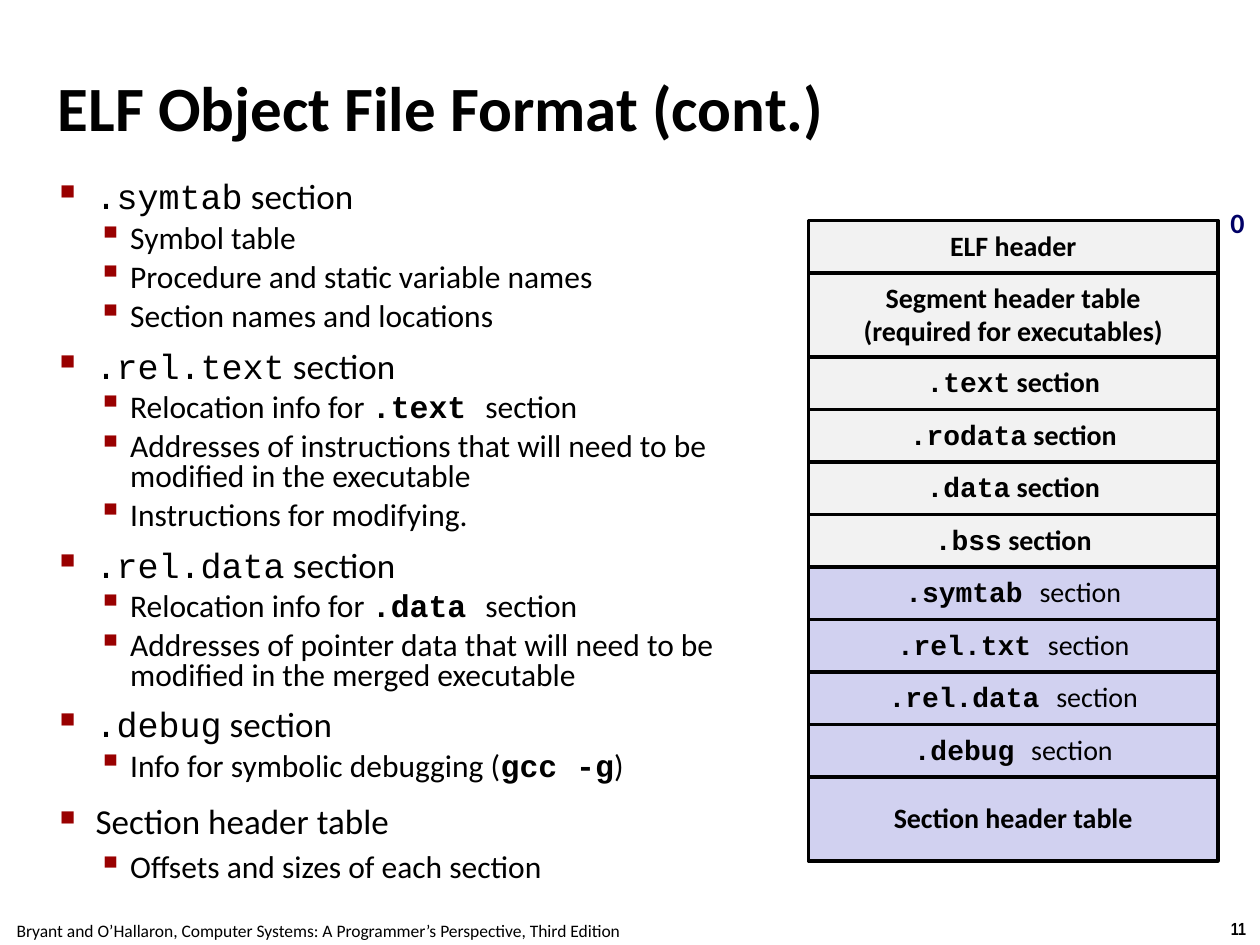
"""Build the slide on the sections of an ELF object file."""
from dataclasses import dataclass

from lxml import etree
from pptx import Presentation
from pptx.dml.color import RGBColor
from pptx.enum.shapes import MSO_SHAPE
from pptx.enum.text import MSO_ANCHOR, PP_ALIGN
from pptx.oxml.ns import qn
from pptx.util import Emu, Pt

PX = 7620
RECT = MSO_SHAPE.RECTANGLE
TOP, MIDDLE = MSO_ANCHOR.TOP, MSO_ANCHOR.MIDDLE
LEFT, CENTER = PP_ALIGN.LEFT, PP_ALIGN.CENTER

BLACK = RGBColor(0x00, 0x00, 0x00)
NAVY = RGBColor(0x00, 0x00, 0x66)
RED = RGBColor(0x99, 0x00, 0x00)
GREY = RGBColor(0xF2, 0xF2, 0xF2)
LILAC = RGBColor(0xD1, 0xD1, 0xF0)

SANS, MONO, NARROW = "Calibri", "Courier New", "Arial Narrow"
BOX_LEFT, BOX_TOP, BOX_WIDTH = 770, 210, 390
ROW, TALL_ROW = 50, 80


@dataclass(frozen=True)
class Run:
    text: str
    font: str = SANS
    bold: bool = False


@dataclass(frozen=True)
class Level:
    size: int
    indent: int
    hanging: int
    before: float
    bullet: str
    bullet_pct: int


@dataclass(frozen=True)
class Item:
    level: int
    runs: tuple[Run, ...]
    spacing: float


@dataclass(frozen=True)
class Section:
    lines: tuple[tuple[Run, ...], ...]
    fill: RGBColor
    height: int = ROW
    spacing: float = 0.94


LEVELS = (
    Level(20, 34, 34, 12.5, "■", 60),
    Level(18, 67, 31, 5.6, "▪", 110),
)


def heading(name: str) -> Item:
    return Item(0, (Run(name, MONO), Run(" section")), 0.71)


def detail(*runs: Run) -> Item:
    return Item(1, runs, 0.78)


def relocation(name: str) -> Item:
    return detail(Run("Relocation info for "), Run(f"{name} ", MONO, True), Run("section"))


def plain_section(name: str) -> Section:
    return Section(((Run(name, MONO, True), Run(" section", SANS, True)),), GREY)


def marked_section(name: str) -> Section:
    return Section(((Run(f"{name} ", MONO, True), Run("section")),), LILAC)


def titled_section(fill: RGBColor, height: int, *lines: str) -> Section:
    return Section(tuple((Run(line, SANS, True),) for line in lines), fill, height, 0.98)


ITEMS = (
    heading(".symtab"),
    detail(Run("Symbol table")),
    detail(Run("Procedure and static variable names")),
    detail(Run("Section names and locations")),
    heading(".rel.text"),
    relocation(".text"),
    detail(Run("Addresses of instructions that will need to be modified in the executable")),
    detail(Run("Instructions for modifying.")),
    heading(".rel.data"),
    relocation(".data"),
    detail(Run("Addresses of pointer data that will need to be modified in the merged executable")),
    heading(".debug"),
    detail(Run("Info for symbolic debugging ("), Run("gcc -g", MONO, True), Run(")")),
    Item(0, (Run("Section header table"),), 0.88),
    Item(1, (Run("Offsets and sizes of each section"),), 0.88),
)

SECTIONS = (
    titled_section(GREY, ROW, "ELF header"),
    titled_section(GREY, TALL_ROW, "Segment header table", "(required for executables)"),
    *map(plain_section, (".text", ".rodata", ".data", ".bss")),
    *map(marked_section, (".symtab", ".rel.txt", ".rel.data", ".debug")),
    titled_section(LILAC, TALL_ROW, "Section header table"),
)


def px(n: int) -> Emu:
    return Emu(n * PX)


def add_runs(p, runs: tuple[Run, ...], size: int, color: RGBColor = BLACK) -> None:
    for run in runs:
        r = p.add_run()
        r.text = run.text
        r.font.name = run.font
        r.font.size = Pt(size)
        r.font.bold = run.bold
        r.font.color.rgb = color


def next_paragraph(tf, index: int):
    return tf.add_paragraph() if index else tf.paragraphs[0]


def add_frame(s, x: int, y: int, w: int, h: int, anchor=TOP, wrap: bool = True, inset: int = 5):
    tf = s.shapes.add_textbox(px(x), px(y), px(w), px(h)).text_frame
    tf.word_wrap = wrap
    tf.vertical_anchor = anchor
    tf.margin_left = tf.margin_right = px(inset)
    tf.margin_top = tf.margin_bottom = px(min(inset, 6))
    return tf


def add_label(s, x: int, y: int, w: int, h: int, run: Run, size: int, color: RGBColor = BLACK) -> None:
    p = add_frame(s, x, y, w, h, wrap=False, inset=12).paragraphs[0]
    p.alignment = CENTER
    add_runs(p, (run,), size, color)


def set_bullet(p, level: Level) -> None:
    pPr = p._p.get_or_add_pPr()
    pPr.set("marL", str(px(level.indent)))
    pPr.set("indent", str(-px(level.hanging)))
    clr = etree.SubElement(pPr, qn("a:buClr"))
    etree.SubElement(clr, qn("a:srgbClr"), val=str(RED))
    etree.SubElement(pPr, qn("a:buSzPct"), val=str(level.bullet_pct * 1000))
    etree.SubElement(pPr, qn("a:buChar"), char=level.bullet)


def add_outline(s, items: tuple[Item, ...]) -> None:
    tf = add_frame(s, 52, 172, 692, 718)
    for i, item in enumerate(items):
        level = LEVELS[item.level]
        p = next_paragraph(tf, i)
        p.level = item.level
        p.alignment = LEFT
        p.line_spacing = item.spacing
        p.space_before = Pt(level.before)
        set_bullet(p, level)
        add_runs(p, item.runs, level.size)


def add_section(s, y: int, section: Section) -> None:
    sp = s.shapes.add_shape(RECT, px(BOX_LEFT), px(y), px(BOX_WIDTH), px(section.height))
    sp.shadow.inherit = False
    sp.fill.solid()
    sp.fill.fore_color.rgb = section.fill
    sp.line.color.rgb = BLACK
    sp.line.width = Pt(2)
    tf = sp.text_frame
    tf.word_wrap = False
    tf.vertical_anchor = MIDDLE
    for i, runs in enumerate(section.lines):
        p = next_paragraph(tf, i)
        p.alignment = CENTER
        p.line_spacing = section.spacing
        add_runs(p, runs, 16)


def main() -> None:
    prs = Presentation()
    prs.slide_width, prs.slide_height = px(1200), px(900)
    s = prs.slides.add_slide(prs.slide_layouts[6])
    add_label(s, 1159, 868, 41, 32, Run("11", NARROW, True), 10)
    add_label(s, -2, 870, 610, 32, Run(
        "Bryant and O’Hallaron, Computer Systems: A Programmer’s Perspective, Third Edition"), 10)
    title = add_frame(s, 50, 50, 1144, 103, MIDDLE)
    add_runs(title.paragraphs[0], (Run("ELF Object File Format (cont.)", SANS, True),), 36)
    add_outline(s, ITEMS)
    y = BOX_TOP
    for section in SECTIONS:
        add_section(s, y, section)
        y += section.height
    add_label(s, 1160, 190, 37, 44, Run("0", SANS, True), 16, NAVY)
    prs.save("out.pptx")


if __name__ == "__main__":
    main()
